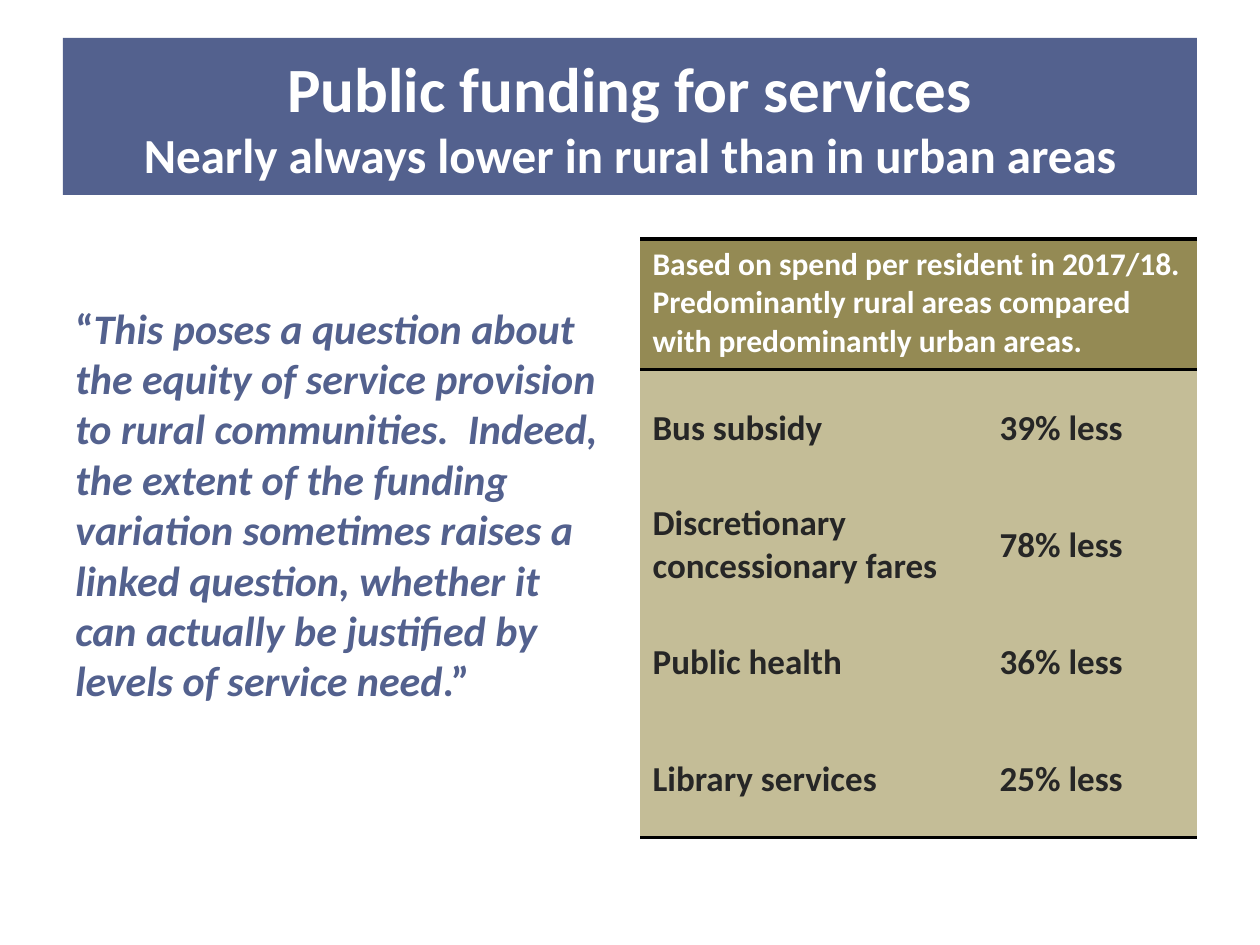
from pptx import Presentation
from pptx.dml.color import RGBColor as RGB
from pptx.enum.shapes import MSO_SHAPE as Shape
from pptx.enum.text import MSO_ANCHOR as Anchor, PP_ALIGN as Align
from pptx.oxml import parse_xml
from pptx.oxml.ns import nsdecls
from pptx.util import Pt

SCALE = 914400 / 126
WHITE = RGB(0xFF, 0xFF, 0xFF)
BLACK = RGB(0, 0, 0)
BLUE = RGB(0x53, 0x61, 0x8E)
OLIVE = RGB(0x94, 0x8A, 0x54)
SAND = RGB(0xC4, 0xBD, 0x97)
INK = RGB(0x26, 0x26, 0x26)
PLAIN = "{2D5ABB26-0587-4C30-8999-92F81FD0307C}"

HEAD = [
    "Based on spend per resident in 2017/18.",
    "Predominantly rural areas compared with predominantly urban areas.",
]
ROWS = [
    ("Bus subsidy", "39% less"),
    ("Discretionary concessionary fares", "78% less"),
    ("Public health", "36% less"),
    ("Library services", "25% less"),
]
QUOTE = (
    "This poses a question about the equity of service provision to rural "
    "communities.  Indeed, the extent of the funding variation sometimes "
    "raises a linked question, whether it can actually be justified by "
    "levels of service need"
)


def px(n):
    return round(n * SCALE)


class Deck:
    font = "Calibri"

    def __init__(self, wide, high):
        self.prs = Presentation()
        self.prs.slide_width, self.prs.slide_height = px(wide), px(high)
        self.slide = self.prs.slides.add_slide(self.prs.slide_layouts[6])

    def style(self, para, size, color):
        font = para.font
        font.name, font.size, font.bold = self.font, Pt(size), True
        font.color.rgb = color

    def banner(self, box, lines):
        shape = self.slide.shapes.add_shape(Shape.RECTANGLE, *map(px, box))
        shape.shadow.inherit = False
        shape.fill.solid()
        shape.fill.fore_color.rgb = BLUE
        shape.line.fill.background()
        frame = shape.text_frame
        frame.word_wrap = True
        frame.vertical_anchor = Anchor.MIDDLE
        para = frame.paragraphs[0]
        para.alignment = Align.CENTER
        self.style(para, lines[0][1], WHITE)
        for i, (text, size) in enumerate(lines):
            if i:
                para.add_line_break()
            run = para.add_run()
            run.text = text
            run.font.size = Pt(size)

    def quote(self, box, top, text):
        frame = self.slide.shapes.add_textbox(*map(px, box)).text_frame
        frame.word_wrap = True
        frame.margin_top = px(top)
        para = frame.paragraphs[0]
        self.style(para, 24, BLUE)
        for part, slant in (("“", False), (text, True), (".”", False)):
            run = para.add_run()
            run.text = part
            run.font.italic = slant

    def rule(self, cell, side):
        cell._tc.get_or_add_tcPr().append(parse_xml(
            f'<a:ln{side} {nsdecls("a")} w="{Pt(2)}"><a:solidFill>'
            f'<a:srgbClr val="{BLACK}"/></a:solidFill></a:ln{side}>'))

    def cell(self, cell, lines, size, color, fill, sides="", mid=True):
        for side in sides:
            self.rule(cell, side)
        cell.fill.solid()
        cell.fill.fore_color.rgb = fill
        cell.vertical_anchor = Anchor.MIDDLE if mid else Anchor.TOP
        cell.text = "\n".join(lines)
        for para in cell.text_frame.paragraphs:
            self.style(para, size, color)

    def table(self, left, top, cols, highs, head, rows):
        box = left, top, sum(cols), sum(highs)
        grid = self.slide.shapes.add_table(
            len(highs), len(cols), *map(px, box)).table
        grid.first_row = grid.horz_banding = False
        grid._tbl.tblPr[0].text = PLAIN
        for col, wide in zip(grid.columns, cols):
            col.width = px(wide)
        for row, high in zip(grid.rows, highs):
            row.height = px(high)
        grid.cell(0, 0).merge(grid.cell(0, len(cols) - 1))
        for c in range(1, len(cols)):
            for side in "TB":
                self.rule(grid.cell(0, c), side)
        self.cell(grid.cell(0, 0), head, 18, WHITE, OLIVE, "TB", False)
        for r, row in enumerate(rows, 1):
            sides = "B" if r == len(rows) else ""
            for c, text in enumerate(row):
                self.cell(grid.cell(r, c), [text], 20, INK, SAND, sides)


def main():
    deck = Deck(1260, 945)
    deck.banner((63, 38, 1134, 157), [
        ("Public funding for services", 36),
        ("Nearly always lower in rural than in urban areas", 28),
    ])
    deck.quote((63, 234, 557, 610), 68, QUOTE)
    deck.table(640, 239, [347, 210], [131] + [117] * len(ROWS), HEAD, ROWS)
    deck.prs.save("out.pptx")


if __name__ == "__main__":
    main()
